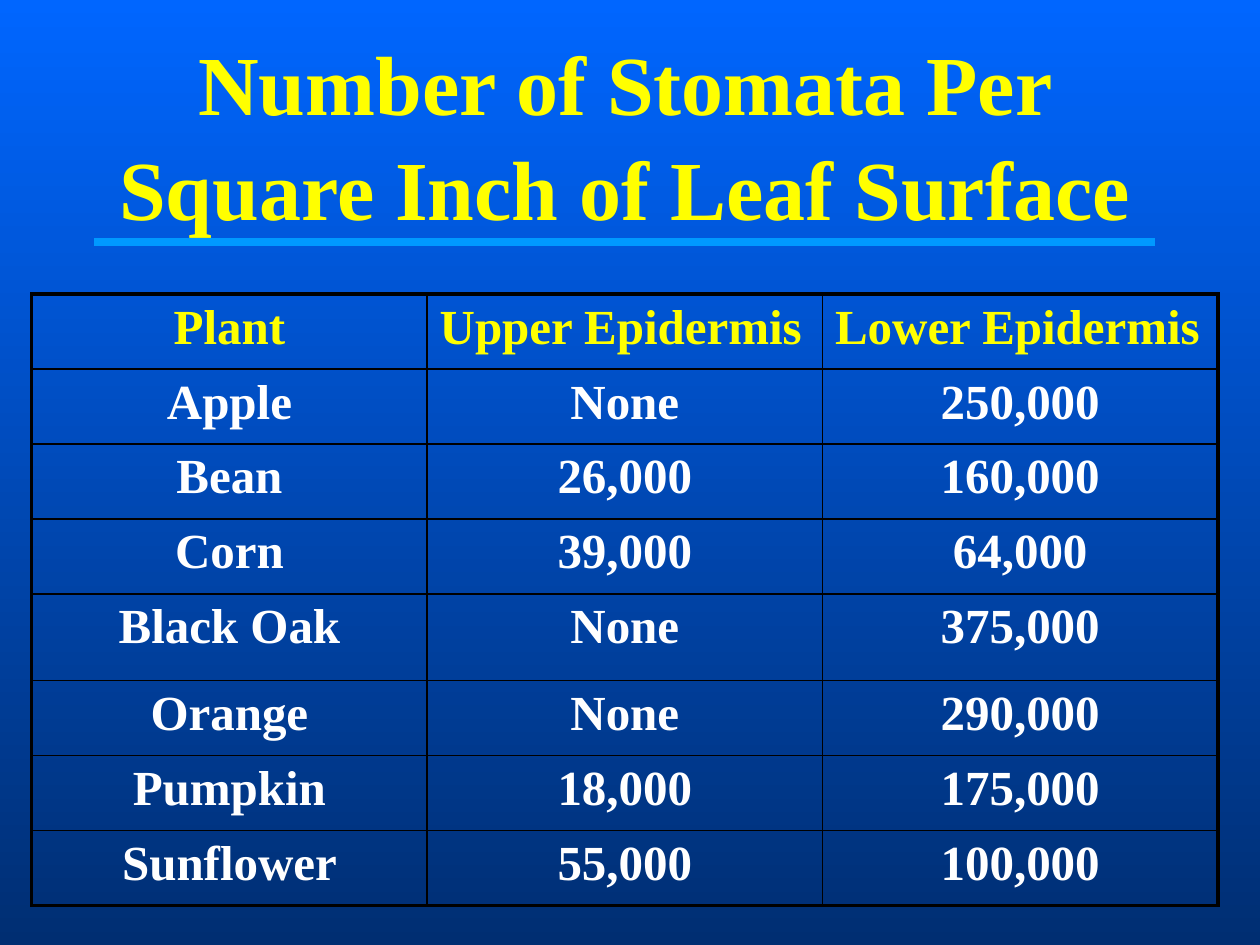
import lxml.etree
import pptx
import pptx.dml.color
import pptx.enum.shapes
import pptx.enum.text
import pptx.oxml.ns
import pptx.util
from pptx.util import Cm

HEADINGS = ["Plant", "Upper Epidermis", "Lower Epidermis"]
STOMATA = [
    ["Apple", "None", "250,000"],
    ["Bean", "26,000", "160,000"],
    ["Corn", "39,000", "64,000"],
    ["Black Oak", "None", "375,000"],
    ["Orange", "None", "290,000"],
    ["Pumpkin", "18,000", "175,000"],
    ["Sunflower", "55,000", "100,000"],
]
THIN, THICK = 1, 2.25


def color(hex_string):
    return pptx.dml.color.RGBColor.from_string(hex_string)


def add_element(parent, tag, **attributes):
    return lxml.etree.SubElement(parent, pptx.oxml.ns.qn(tag), attributes)


class SlideBuilder:
    font_name = "Times New Roman"
    yellow, white, black, accent = "FFFF00", "FFFFFF", "000000", "0099FF"
    gradient = ("0066FF", "002E72")

    def __init__(self, slide):
        self.slide = slide

    def background(self):
        fill = self.slide.background.fill
        fill.gradient()
        fill.gradient_angle = 270
        for stop, hex_string, position in zip(fill.gradient_stops, self.gradient, (0, 1)):
            stop.color.rgb = color(hex_string)
            stop.position = position

    def style(self, paragraph, size, hex_string, centered=True):
        align = pptx.enum.text.PP_ALIGN
        paragraph.alignment = align.CENTER if centered else align.LEFT
        font = paragraph.font
        font.name, font.size, font.bold = self.font_name, pptx.util.Pt(size), True
        font.color.rgb = color(hex_string)

    def title(self, text, left, top, width, height):
        shape = self.slide.shapes.add_textbox(left, top, width, height)
        frame = shape.text_frame
        frame.word_wrap = True
        frame.vertical_anchor = pptx.enum.text.MSO_ANCHOR.MIDDLE
        paragraph = frame.paragraphs[0]
        paragraph.text = text
        paragraph.line_spacing = 1.05
        self.style(paragraph, 48, self.yellow)

    def rule(self, left, right, top):
        line = self.slide.shapes.add_connector(
            pptx.enum.shapes.MSO_CONNECTOR.STRAIGHT, left, top, right, top)
        line.line.color.rgb = color(self.accent)
        line.line.width = pptx.util.Pt(4.5)
        add_element(line._element.spPr, "a:effectLst")

    def borders(self, cell, **widths):
        properties = cell._tc.get_or_add_tcPr()
        for side, width in widths.items():
            border = add_element(properties, f"a:ln{side}", w=str(pptx.util.Pt(width)))
            add_element(add_element(border, "a:solidFill"), "a:srgbClr", val=self.black)

    def table(self, rows, left, top, column_width, row_heights):
        last_row, last_column = len(rows) - 1, len(rows[0]) - 1
        table = self.slide.shapes.add_table(
            len(rows), len(rows[0]), left, top,
            column_width * len(rows[0]), sum(row_heights)).table
        table.first_row = table.horz_banding = False
        for column in table.columns:
            column.width = column_width
        for r, values in enumerate(rows):
            table.rows[r].height = row_heights[r]
            for c, value in enumerate(values):
                cell = table.cell(r, c)
                cell.text = value
                heading = r == 0
                self.style(cell.text_frame.paragraphs[0], 28,
                           self.yellow if heading else self.white,
                           centered=not heading or c == 0)
                # Thick outer frame, thin inner grid
                self.borders(cell,
                             L=THICK if c == 0 else THIN,
                             R=THICK if c == last_column else THIN,
                             T=THICK if r == 0 else THIN,
                             B=THICK if r == last_row else THIN)
                cell.fill.background()


def main():
    presentation = pptx.Presentation()
    presentation.slide_width, presentation.slide_height = Cm(25.4), Cm(19.05)
    builder = SlideBuilder(presentation.slides.add_slide(presentation.slide_layouts[6]))

    # Background and title
    builder.background()
    builder.title("Number of Stomata Per Square Inch of Leaf Surface",
                  Cm(1.48), Cm(1.07), Cm(22.23), Cm(3.18))

    # Stomata table, with a taller row for the oak
    rows = [HEADINGS] + STOMATA
    heights = [Cm(1.75) if row[0] == "Black Oak" else Cm(1.51) for row in rows]
    builder.table(rows, Cm(0.64), Cm(5.93), Cm(7.97), heights)

    # Line under the title
    builder.rule(Cm(1.9), Cm(23.29), Cm(4.87))
    presentation.save("out.pptx")


if __name__ == "__main__":
    main()
